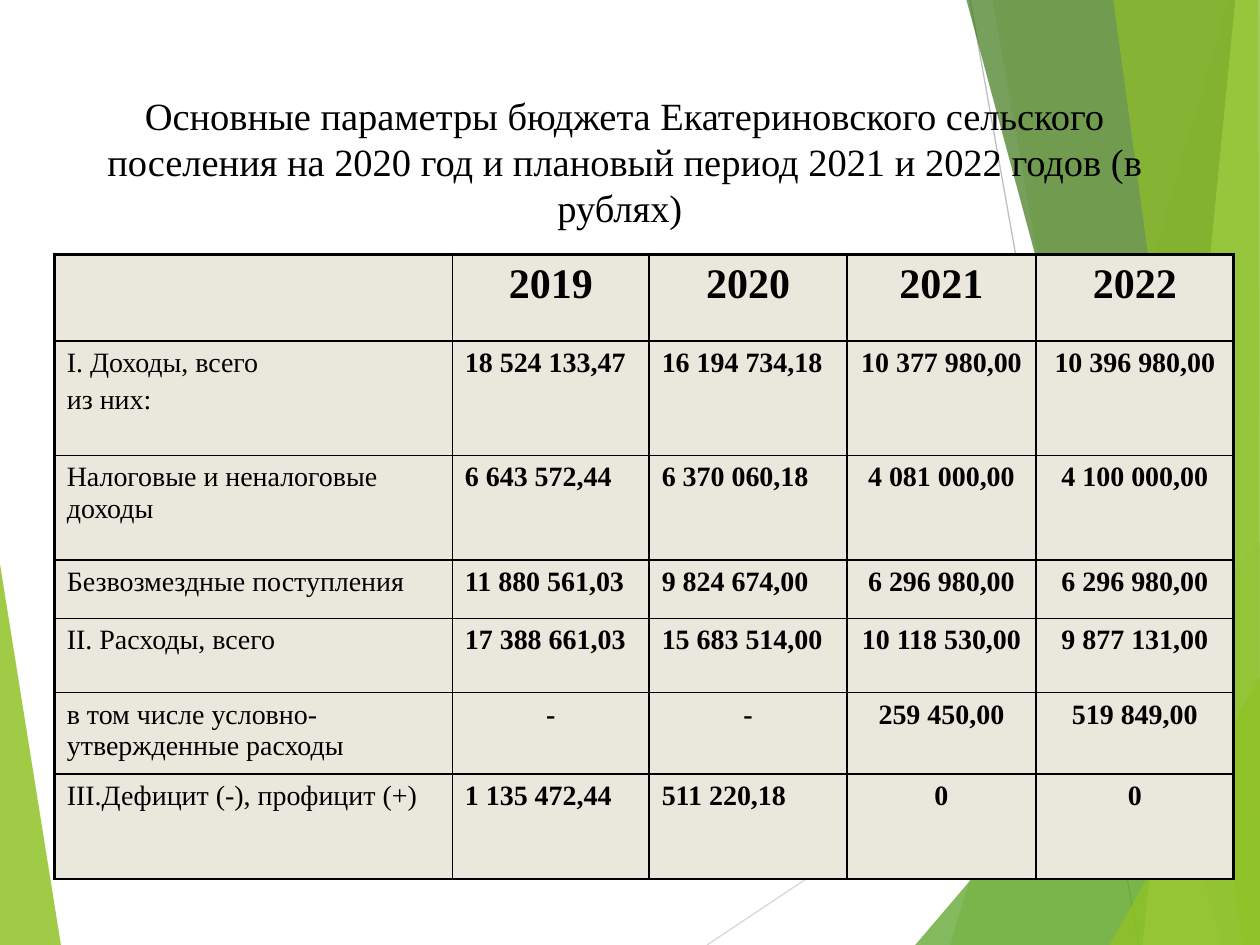
from lxml import etree
from pptx import Presentation
from pptx.dml.color import RGBColor
from pptx.enum.shapes import MSO_CONNECTOR
from pptx.enum.text import MSO_ANCHOR, PP_ALIGN
from pptx.oxml.ns import qn
from pptx.util import Pt

STRAIGHT = MSO_CONNECTOR.STRAIGHT
TOP = MSO_ANCHOR.TOP
LEFT, CENTER = PP_ALIGN.LEFT, PP_ALIGN.CENTER
FONT = "Times New Roman"
BLACK, CELL_FILL = "000000", "EAE8DC"
THICK, THIN = 2.25, 1

TITLE = ("Основные параметры бюджета Екатериновского сельского поселения "
         "на 2020 год и плановый период 2021 и 2022 годов (в рублях) ")
COL_WIDTHS = [227.5, 112.5, 113, 108, 113]
ROW_HEIGHTS = [49.5, 65.5, 59.5, 33.5, 42.5, 46.5, 60]
ROWS = [
    ["", "2019", "2020", "2021", "2022"],
    ["I. Доходы, всего\nиз них:", "18 524 133,47", "16 194 734,18",
     "10 377 980,00 ", "10 396 980,00"],
    ["Налоговые и неналоговые доходы", "6 643 572,44", "6 370 060,18",
     "4 081 000,00", "4 100 000,00"],
    ["Безвозмездные поступления", "11 880 561,03", "9 824 674,00",
     "6 296 980,00", "6 296 980,00"],
    ["II. Расходы, всего", "17 388 661,03", "15 683 514,00",
     "10 118 530,00", "9 877 131,00"],
    ["в том числе условно-утвержденные расходы", "-", "-",
     "259 450,00", "519 849,00"],
    ["III.Дефицит (-), профицит (+)", "1 135 472,44", "511 220,18", "0", "0"],
]

LEFT_WEDGE = ([(-0.7, 316), (35.3, 540.7), (-0.7, 540)], "90C226", 85)
RAYS = [([(404, 540), (720.7, 329)], "D9D9D9"),
        ([(554.4, 0), (650.9, 540)], "BFBFBF")]
RIGHT_FACETS = [
    ([(702, 0), (542.9, 540), (721, 540), (721, 0)], "90C226", 30),
    ([(567.4, -0.7), (661.7, 540), (720.7, 540), (720.7, -0.7)], "90C226", 20),
    ([(522.7, 540), (720, 309), (720.7, 540)], "54A021", 72),
    ([(552.2, -0.7), (698.4, 540), (720.7, 540), (720.7, -0.7)], "3F7819", 70),
    ([(706.3, -0.7), (653, 540), (720.7, 540), (720, -0.7)], "C0E474", 70),
    ([(635.8, -0.7), (709.9, 540), (720, 540), (718.6, -0.7)], "90C226", 65),
    ([(634.3, 540), (720.7, 385.2), (720.7, 540)], "90C226", 80),
]


def rgb(color):
    return RGBColor.from_string(color)


def add_facet(s, points, color, opacity):
    builder = s.shapes.build_freeform(*points[0], scale=Pt(1))
    builder.add_line_segments(points[1:], close=True)
    sp = builder.convert_to_shape()
    sp.shadow.inherit = False
    sp.line.fill.background()
    sp.fill.solid()
    sp.fill.fore_color.rgb = rgb(color)
    clr = sp.fill._xPr.find(qn("a:solidFill"))[0]
    etree.SubElement(clr, qn("a:alpha"), val=str(opacity * 1000))


def add_ray(s, points, color):
    ends = [Pt(v) for point in points for v in point]
    ray = s.shapes.add_connector(STRAIGHT, *ends)
    ray.line.color.rgb = rgb(color)
    ray.line.width = Pt(0.75)
    etree.SubElement(ray._element.spPr, qn("a:effectLst"))


def style_text(tf, size, bold, align):
    for p in tf.paragraphs:
        p.alignment = align
        for r in p.runs:
            r.font.name = FONT
            r.font.size = Pt(size)
            r.font.bold = bold
            r.font.color.rgb = rgb(BLACK)


def add_title(s):
    sp = s.shapes.add_textbox(Pt(42.5), Pt(49), Pt(629), Pt(73.5))
    tf = sp.text_frame
    tf.word_wrap = True
    tf.vertical_anchor = TOP
    tf.text = TITLE
    style_text(tf, 22, False, CENTER)


def set_borders(cell, widths):
    tcPr = cell._tc.get_or_add_tcPr()
    for i, (side, width) in enumerate(widths.items()):
        ln = etree.Element(qn("a:ln" + side), w=str(Pt(width)))
        fill = etree.SubElement(ln, qn("a:solidFill"))
        etree.SubElement(fill, qn("a:srgbClr"), val=BLACK)
        tcPr.insert(i, ln)


def fill_cell(cell, text, row, col):
    cell.fill.solid()
    cell.fill.fore_color.rgb = rgb(CELL_FILL)
    set_borders(cell, {
        "L": THICK if col == 0 else THIN,
        "R": THICK if col == len(COL_WIDTHS) - 1 else THIN,
        "T": THICK if row == 0 else THIN,
        "B": THIN,
    })
    tf = cell.text_frame
    tf.text = text
    centered = row == 0 or col > 2 or text == "-"
    style_text(tf, 24 if row == 0 else 16, col > 0, CENTER if centered else LEFT)
    for p in tf.paragraphs[1:]:
        p.space_before = Pt(3.2)


def add_budget_table(s):
    frame = s.shapes.add_table(len(ROWS), len(COL_WIDTHS), Pt(31), Pt(145.4),
                               Pt(sum(COL_WIDTHS)), Pt(sum(ROW_HEIGHTS)))
    table = frame.table
    for column, width in zip(table.columns, COL_WIDTHS):
        column.width = Pt(width)
    for row, height in zip(table.rows, ROW_HEIGHTS):
        row.height = Pt(height)
    for i, texts in enumerate(ROWS):
        for j, text in enumerate(texts):
            fill_cell(table.cell(i, j), text, i, j)


def main():
    prs = Presentation()
    prs.slide_width, prs.slide_height = Pt(720), Pt(540)
    s = prs.slides.add_slide(prs.slide_layouts[6])
    add_facet(s, *LEFT_WEDGE)
    for ray in RAYS:
        add_ray(s, *ray)
    for facet in RIGHT_FACETS:
        add_facet(s, *facet)
    add_title(s)
    add_budget_table(s)
    prs.save("out.pptx")


if __name__ == "__main__":
    main()
